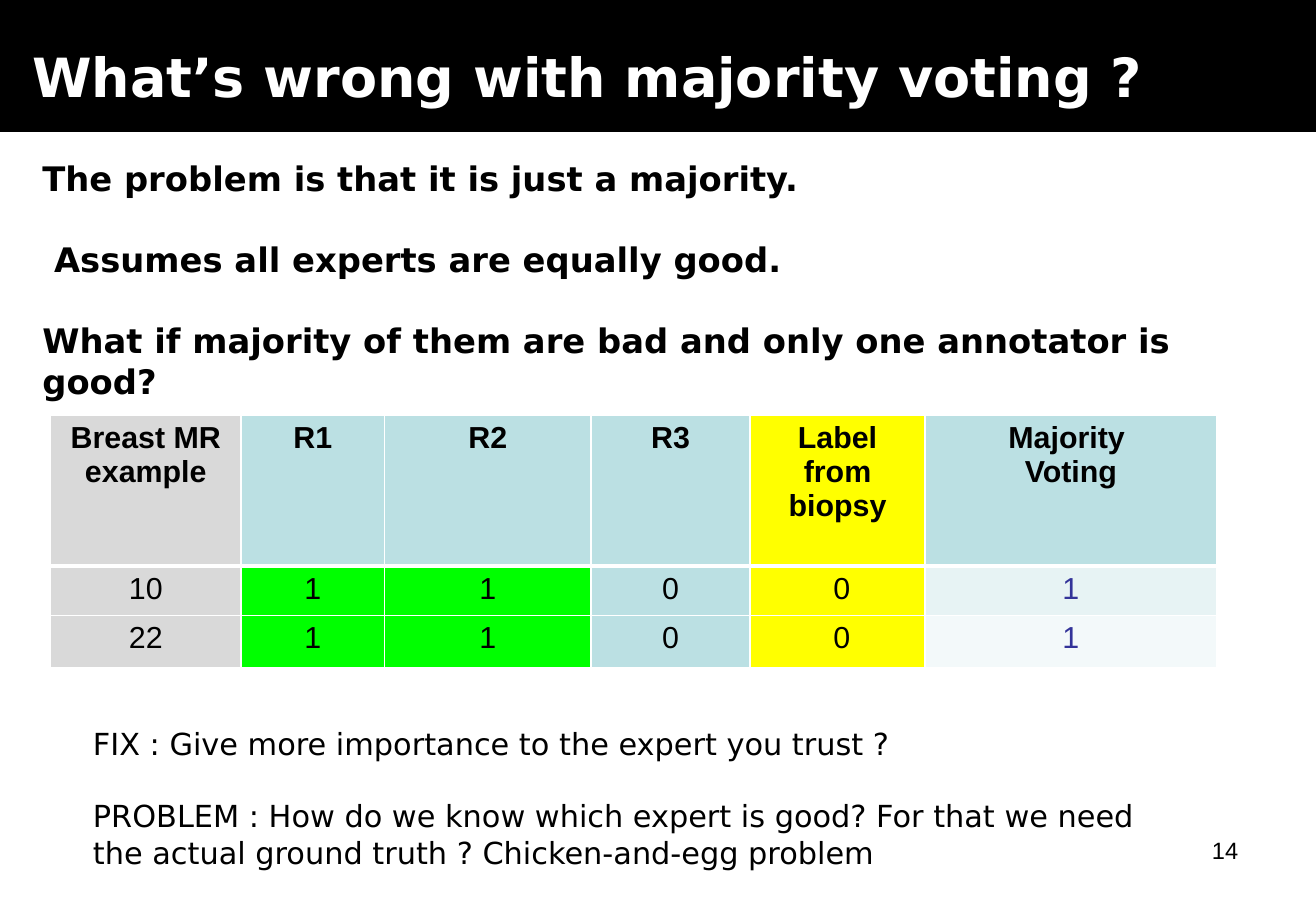
"""Build the slide on what is wrong with majority voting."""
from dataclasses import dataclass

from lxml.etree import SubElement
from pptx import Presentation
from pptx.dml.color import RGBColor
from pptx.enum.shapes import MSO_SHAPE
from pptx.enum.text import MSO_ANCHOR, PP_ALIGN
from pptx.oxml.ns import qn
from pptx.util import Inches, Pt


@dataclass(frozen=True)
class Theme:
    sans: str = "DejaVu Sans"
    plain: str = "Arial"
    black: str = "000000"
    white: str = "FFFFFF"
    grey: str = "D9D9D9"
    teal: str = "BBE0E3"
    pale: str = "E7F3F4"
    paler: str = "F3F9FA"
    green: str = "00FF00"
    yellow: str = "FFFF00"
    indigo: str = "333399"
    title: int = 32
    claim: int = 20
    text: int = 18
    number: int = 14
    thin: int = 1
    thick: int = 3


THEME = Theme()

TITLE = ["What’s wrong with majority voting ?"]
CLAIMS = [
    "The problem is that it is just a majority.",
    " Assumes all experts are equally good.",
    "What if majority of them are bad and only one annotator is good?",
]
REMEDIES = [
    "FIX : Give more importance to the expert you trust ?",
    "PROBLEM : How do we know which expert is good? For that we need",
    "the actual ground truth ? Chicken-and-egg problem",
]
PAGE = ["14"]
VOTES = [
    ["Breast MR example", "R1", "R2", "R3", "Label from biopsy", "Majority \nVoting"],
    ["10", "1", "1", "0", " 0", "1"],
    ["22", "1", "1", "0", " 0", "1"],
]
VOTER_FILLS = [THEME.grey, THEME.green, THEME.green, THEME.teal, THEME.yellow]
VOTE_FILLS = [
    [THEME.grey, THEME.teal, THEME.teal, THEME.teal, THEME.yellow, THEME.teal],
    VOTER_FILLS + [THEME.pale],
    VOTER_FILLS + [THEME.paler],
]

GRID_COLUMNS, GRID_ROWS = 130, 90
BANNER_AREA = (0, 0, GRID_COLUMNS, 13)
TITLE_AREA = (2, 0, 121.3, 15)
CLAIMS_AREA = (3, 15, 123, 33)
VOTES_AREA = (5, 41, 115, 25)
REMEDIES_AREA = (8, 71, 108.6, 15.7)
PAGE_AREA = (93.1, 82, 30.4, 6.2)
VOTE_COLUMNS = [18.8, 14.2, 20.4, 15.7, 17.3, 28.8]
VOTE_ROWS = [14.9, 4.9, 5.2]


def cells(count):
    return Inches(count / 12)


def place(area):
    return [cells(side) for side in area]


def style(paragraph, size, font=THEME.plain, color=THEME.black, bold=False, align=PP_ALIGN.LEFT):
    paragraph.alignment = align
    for run in paragraph.runs:
        run.font.size = Pt(size)
        run.font.name = font
        run.font.bold = bold
        run.font.color.rgb = RGBColor.from_string(color)


def add_text(slide, area, lines, size, spaced=(), anchor=MSO_ANCHOR.TOP, **look):
    frame = slide.shapes.add_textbox(*place(area)).text_frame
    frame.word_wrap = True
    frame.vertical_anchor = anchor
    frame.text = "\n".join(lines)
    for index, paragraph in enumerate(frame.paragraphs):
        style(paragraph, size, **look)
        if index in spaced:
            paragraph.space_before = Pt(size * 1.2)


def add_borders(cell, widths):
    properties = cell._tc.get_or_add_tcPr()
    for side, width in widths.items():
        line = SubElement(properties, qn(f"a:{side}"), w=str(Pt(width)))
        SubElement(SubElement(line, qn("a:solidFill")), qn("a:srgbClr"), val=THEME.white)


def add_votes(slide):
    table = slide.shapes.add_table(len(VOTE_ROWS), len(VOTE_COLUMNS), *place(VOTES_AREA)).table
    for column, width in zip(table.columns, VOTE_COLUMNS):
        column.width = cells(width)
    for row, height in zip(table.rows, VOTE_ROWS):
        row.height = cells(height)
    for r, (labels, fills) in enumerate(zip(VOTES, VOTE_FILLS)):
        above = THEME.thick if r == 1 else THEME.thin
        below = THEME.thick if r == 0 else THEME.thin
        for c, (label, fill) in enumerate(zip(labels, fills)):
            cell = table.cell(r, c)
            cell.text_frame.text = label
            verdict = r > 0 and c == len(labels) - 1
            for paragraph in cell.text_frame.paragraphs:
                style(paragraph, THEME.text, bold=r == 0, align=PP_ALIGN.CENTER,
                      color=THEME.indigo if verdict else THEME.black)
            add_borders(cell, {"lnL": THEME.thin, "lnR": THEME.thin, "lnT": above, "lnB": below})
            cell.fill.solid()
            cell.fill.fore_color.rgb = RGBColor.from_string(fill)


def add_banner(slide):
    banner = slide.shapes.add_shape(MSO_SHAPE.RECTANGLE, *place(BANNER_AREA))
    banner.shadow.inherit = False
    banner.fill.solid()
    banner.fill.fore_color.rgb = RGBColor.from_string(THEME.black)
    banner.line.color.rgb = RGBColor.from_string(THEME.black)
    banner.line.width = Pt(0.75)


def main():
    deck = Presentation()
    deck.slide_width, deck.slide_height = cells(GRID_COLUMNS), cells(GRID_ROWS)
    slide = deck.slides.add_slide(deck.slide_layouts[6])
    add_banner(slide)
    add_text(slide, PAGE_AREA, PAGE, THEME.number, align=PP_ALIGN.RIGHT)
    add_text(slide, TITLE_AREA, TITLE, THEME.title, anchor=MSO_ANCHOR.MIDDLE,
             font=THEME.sans, color=THEME.white, bold=True)
    add_text(slide, CLAIMS_AREA, CLAIMS, THEME.claim, spaced=(1, 2), font=THEME.sans, bold=True)
    add_votes(slide)
    add_text(slide, REMEDIES_AREA, REMEDIES, THEME.text, spaced=(1,), font=THEME.sans)
    deck.save("out.pptx")


if __name__ == "__main__":
    main()
